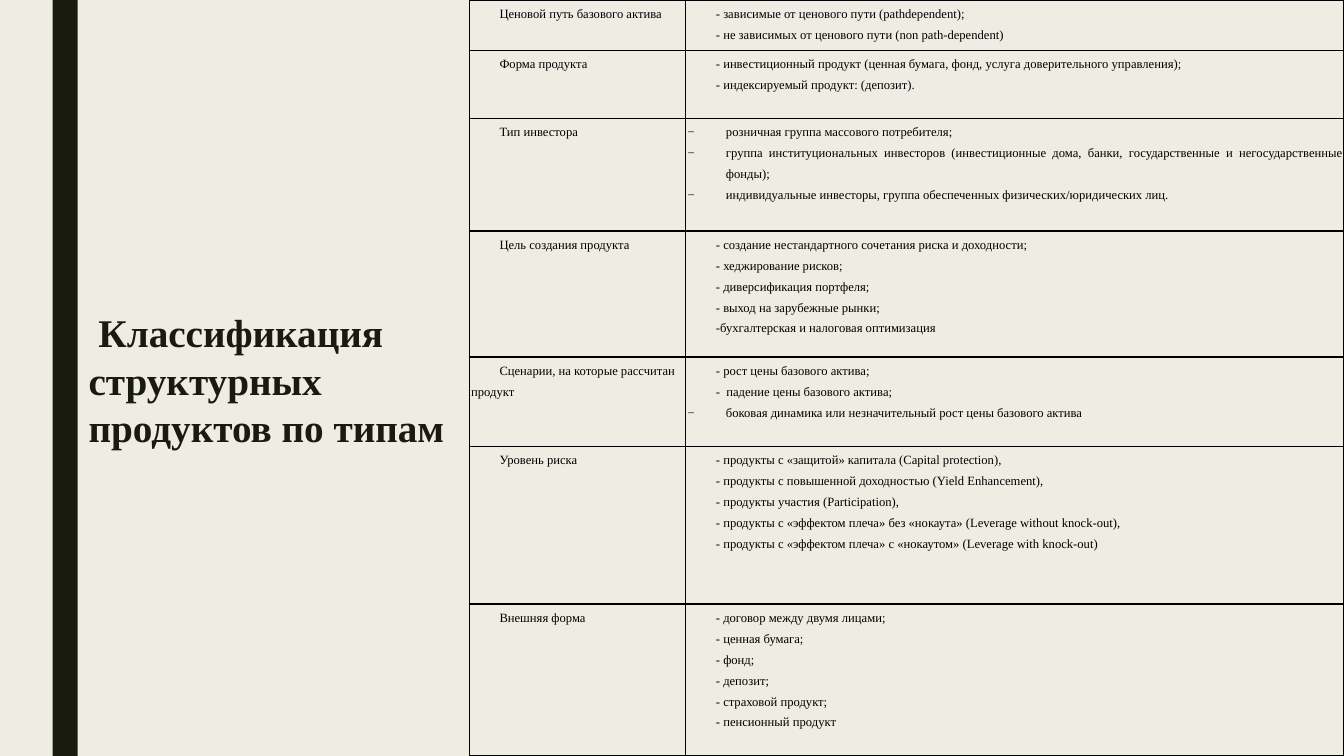
from lxml.etree import SubElement
from pptx import Presentation
from pptx.dml.color import RGBColor
from pptx.enum.shapes import MSO_SHAPE
from pptx.enum.text import MSO_ANCHOR, PP_ALIGN
from pptx.oxml import parse_xml
from pptx.oxml.ns import nsdecls, qn
from pptx.util import Pt

FONT = "Times New Roman"
DARK = "191B0E"
BLACK = "000000"
BULLET = "−"


def paint(color_format, color):
    color_format.rgb = RGBColor.from_string(color)


def add_run(paragraph, text, size, color, bold=False):
    run = paragraph.add_run()
    run.text = text
    run.font.name = FONT
    run.font.size = Pt(size)
    run.font.bold = bold
    paint(run.font.color, color)


deck = Presentation()
deck.slide_width, deck.slide_height = Pt(960), Pt(540)
slide = deck.slides.add_slide(deck.slide_layouts[6])
slide.background.fill.solid()
paint(slide.background.fill.fore_color, "EFEDE3")

# Dark vertical band
band = slide.shapes.add_shape(MSO_SHAPE.RECTANGLE, Pt(37.5), 0, Pt(18), Pt(540))
band.shadow.inherit = False
band.fill.solid()
paint(band.fill.fore_color, DARK)
band.line.fill.background()

# Title
title = slide.shapes.add_textbox(Pt(56.2), Pt(51), Pt(284.4), Pt(274.5)).text_frame
title.word_wrap = True
title.vertical_anchor = MSO_ANCHOR.BOTTOM
heading = title.paragraphs[0]
heading.line_spacing = 1.01
heading.space_before = heading.space_after = Pt(7)
add_run(heading, " ", 28, DARK)
add_run(heading, "Классификация структурных продуктов по типам", 28, DARK, True)

# Classification: row height, criterion, product types
criteria = [
    (36, "Ценовой путь базового актива", [
        "- зависимые от ценового пути (pathdependent); ",
        "- не зависимых от ценового пути (non path-dependent)"]),
    (48.5, "Форма продукта", [
        "- инвестиционный продукт (ценная бумага, фонд, услуга доверительного управления);",
        "- индексируемый продукт: (депозит)."]),
    (80.5, "Тип инвестора", [
        "−розничная группа массового потребителя;",
        "−группа институциональных инвесторов (инвестиционные дома, банки, "
        "государственные и негосударственные фонды);",
        "−индивидуальные инвесторы, группа обеспеченных физических/юридических лиц."]),
    (90, "Цель создания продукта", [
        "- создание нестандартного сочетания риска и доходности;",
        "- хеджирование рисков;",
        "- диверсификация портфеля;",
        "- выход на зарубежные рынки;",
        "-бухгалтерская и налоговая оптимизация"]),
    (64, "Сценарии, на которые рассчитан продукт", [
        "- рост цены базового актива;",
        "-  падение цены базового актива;",
        "−боковая динамика или незначительный рост цены базового актива"]),
    (112.5, "Уровень риска", [
        "- продукты с «защитой» капитала (Capital protection), ",
        "- продукты с повышенной доходностью (Yield Enhancement), ",
        "- продукты участия (Participation), ",
        "- продукты с «эффектом плеча» без «нокаута» (Leverage without knock-out), ",
        "- продукты с «эффектом плеча» с «нокаутом» (Leverage with knock-out) "]),
    (108, "Внешняя форма", [
        "- договор между двумя лицами;",
        "- ценная бумага;",
        "- фонд;",
        "- депозит;",
        "- страховой продукт;",
        "- пенсионный продукт"]),
]

# Table
table = slide.shapes.add_table(
    len(criteria), 2, Pt(335.2), 0, Pt(624.8), Pt(539.5)).table
table.first_row = table.horz_banding = False
table.columns[0].width = Pt(154.6)
table.columns[1].width = Pt(470.2)

for row, (height, criterion, types) in enumerate(criteria):
    table.rows[row].height = Pt(height)
    for column, lines in enumerate(([criterion], types)):
        cell = table.cell(row, column)
        cell.margin_left = cell.margin_right = Pt(1.4)
        cell.margin_top = cell.margin_bottom = 0
        cell.fill.background()

        # Cell borders come before the fill
        properties = cell._tc.get_or_add_tcPr()
        for position, side in enumerate(("lnL", "lnR", "lnT", "lnB")):
            properties.insert(position, parse_xml(
                f'<a:{side} {nsdecls("a")} w="{Pt(1)}"><a:solidFill>'
                f'<a:srgbClr val="{BLACK}"/></a:solidFill></a:{side}>'))

        for number, line in enumerate(lines):
            frame = cell.text_frame
            paragraph = frame.add_paragraph() if number else frame.paragraphs[0]
            paragraph.line_spacing = 1.5
            paragraph.alignment = PP_ALIGN.JUSTIFY if column else PP_ALIGN.LEFT
            bulleted = line.startswith(BULLET)
            layout = paragraph._p.get_or_add_pPr()
            layout.set("marL", str(Pt(27.4) if bulleted else 0))
            layout.set("indent", str(Pt(-27.4) if bulleted else Pt(20.2)))
            if bulleted:
                bullet_color = SubElement(layout, qn("a:buClr"))
                SubElement(bullet_color, qn("a:srgbClr")).set("val", BLACK)
                SubElement(layout, qn("a:buFont")).set("typeface", FONT)
                SubElement(layout, qn("a:buChar")).set("char", BULLET)
            add_run(paragraph, line.removeprefix(BULLET), 9, BLACK)

deck.save("out.pptx")
